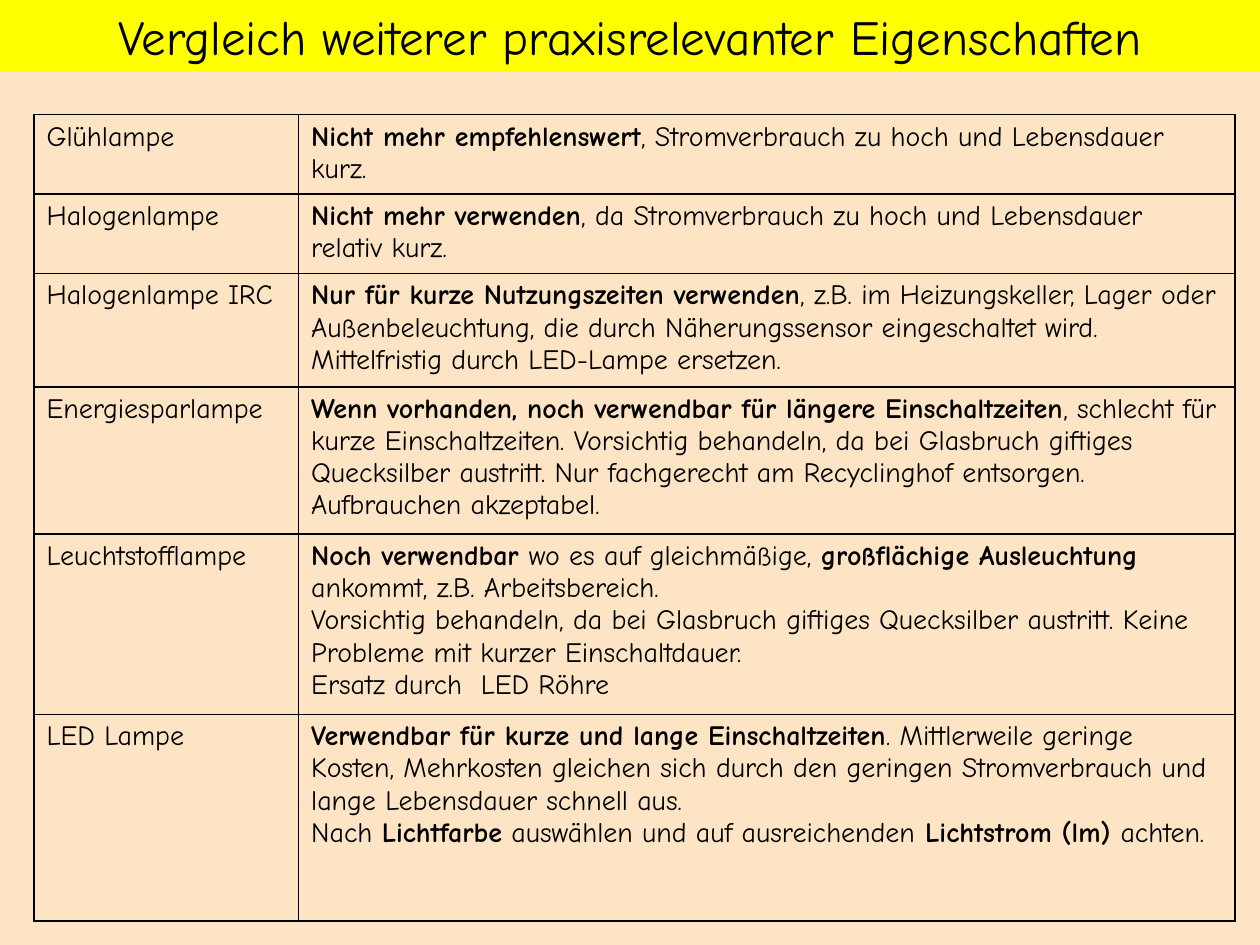
from lxml import etree
from pptx import Presentation
from pptx import util as u
from pptx.dml.color import RGBColor
from pptx.enum import shapes, text
from pptx.oxml.ns import qn

FONT = "Comic Neue"
HUES = {"page": "FCE4C4", "head": "FFFF00", "ink": "000000"}
TITLE = "Vergleich weiterer praxisrelevanter Eigenschaften"
COLS = [2.1, 7.43]
ROWS = [
    (0.63, "Glühlampe",
     ["*Nicht mehr empfehlenswert*, Stromverbrauch zu hoch und Lebensdauer kurz."]),
    (0.63, "Halogenlampe",
     ["*Nicht mehr verwenden*, da Stromverbrauch zu hoch und Lebensdauer relativ kurz."]),
    (0.9, "Halogenlampe IRC",
     ["*Nur für kurze Nutzungszeiten verwenden*, z.B. im Heizungskeller, Lager oder "
      "Außenbeleuchtung, die durch Näherungssensor eingeschaltet wird. "
      "Mittelfristig durch LED-Lampe ersetzen."]),
    (1.17, "Energiesparlampe",
     ["*Wenn vorhanden, noch verwendbar für längere Einschaltzeiten*, schlecht für "
      "kurze Einschaltzeiten. Vorsichtig behandeln, da bei Glasbruch giftiges "
      "Quecksilber austritt. Nur fachgerecht am Recyclinghof entsorgen.",
      "Aufbrauchen akzeptabel."]),
    (1.43, "Leuchtstofflampe",
     ["*Noch verwendbar *wo es auf gleichmäßige, *großflächige Ausleuchtung* "
      "ankommt, z.B. Arbeitsbereich.",
      "Vorsichtig behandeln, da bei Glasbruch giftiges Quecksilber austritt. "
      "Keine Probleme mit kurzer Einschaltdauer.",
      "Ersatz durch  LED Röhre"]),
    (1.64, "LED Lampe",
     ["*Verwendbar für kurze und lange Einschaltzeiten*. Mittlerweile geringe Kosten, "
      "Mehrkosten gleichen sich durch den geringen Stromverbrauch und lange "
      "Lebensdauer schnell aus.",
      "Nach *Lichtfarbe* auswählen und auf ausreichenden* Lichtstrom (lm) *achten."]),
]


def hue(name):
    """Return the named colour."""
    return RGBColor.from_string(HUES[name])


def style(font, size):
    """Apply the common font in the given size."""
    font.name, font.size = FONT, u.Pt(size)
    font.color.rgb = hue("ink")


def write(frame, lines):
    """Write one paragraph per line, with starred parts in bold."""
    for i, line in enumerate(lines):
        para = frame.add_paragraph() if i else frame.paragraphs[0]
        for j, part in enumerate(line.split("*")):
            if part:
                run = para.add_run()
                run.text = part
                style(run.font, 16)
                run.font.bold = j % 2 == 1


def border(cell):
    """Draw a thin line on all four sides and leave the cell unfilled."""
    props = cell._tc.get_or_add_tcPr()
    for side in ("a:lnL", "a:lnR", "a:lnT", "a:lnB"):
        line = etree.SubElement(props, qn(side), w=str(u.Pt(1)))
        fill = etree.SubElement(line, qn("a:solidFill"))
        etree.SubElement(fill, qn("a:srgbClr"), val=HUES["ink"])
    cell.fill.background()


def add_grid(slide):
    """Add the table of lamps and their advice."""
    high = sum(row[0] for row in ROWS)
    grid = slide.shapes.add_table(
        len(ROWS), len(COLS), u.Inches(0.27), u.Inches(0.91),
        u.Inches(sum(COLS)), u.Inches(high)).table
    grid.first_row = grid.horz_banding = False
    for col, wide in zip(grid.columns, COLS):
        col.width = u.Inches(wide)
    for row, (tall, lamp, advice) in zip(grid.rows, ROWS):
        row.height = u.Inches(tall)
        for cell, lines in zip(row.cells, ([lamp], advice)):
            write(cell.text_frame, lines)
            border(cell)


def add_title(slide):
    """Add the title band across the top."""
    band = slide.shapes.add_shape(
        shapes.MSO_SHAPE.RECTANGLE, 0, 0, u.Inches(10), u.Inches(0.57))
    band.shadow.inherit = False
    band.fill.solid()
    band.fill.fore_color.rgb = hue("head")
    band.line.fill.background()
    frame = band.text_frame
    frame.word_wrap = True
    frame.vertical_anchor = text.MSO_ANCHOR.MIDDLE
    frame.text = TITLE
    para = frame.paragraphs[0]
    para.alignment = text.PP_ALIGN.CENTER
    style(para.runs[0].font, 28)


def main():
    """Build and save the slide."""
    deck = Presentation()
    deck.slide_width, deck.slide_height = u.Inches(10), u.Inches(7.5)
    slide = deck.slides.add_slide(deck.slide_layouts[6])
    slide.background.fill.solid()
    slide.background.fill.fore_color.rgb = hue("page")
    add_grid(slide)
    add_title(slide)
    deck.save("out.pptx")


if __name__ == "__main__":
    main()
